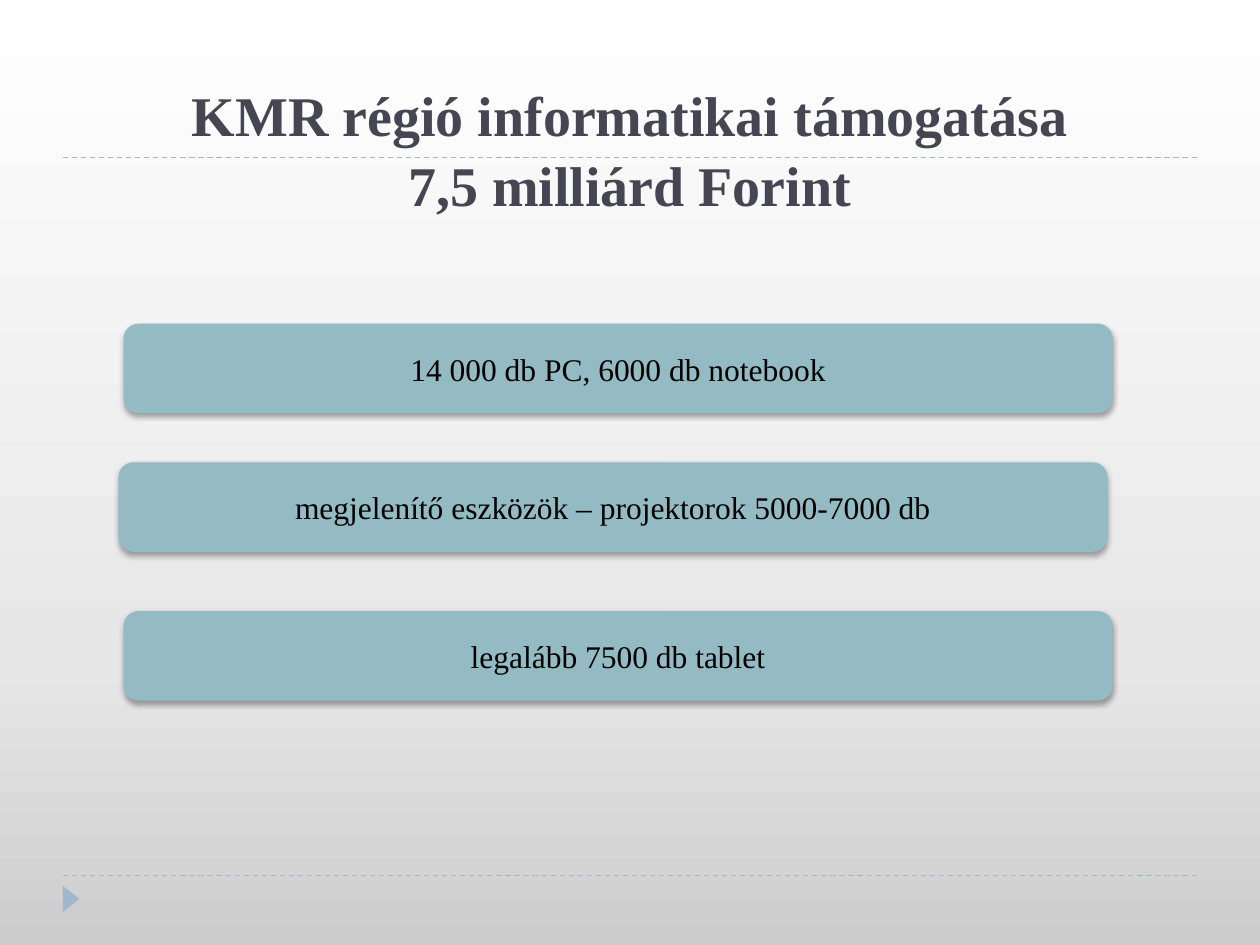
from copy import deepcopy

from lxml import etree
from pptx import Presentation
from pptx.dml.color import RGBColor
from pptx.enum.dml import MSO_LINE
from pptx.enum.shapes import MSO_CONNECTOR, MSO_SHAPE
from pptx.enum.text import MSO_ANCHOR, PP_ALIGN
from pptx.oxml import parse_xml
from pptx.oxml.ns import nsdecls, qn
from pptx.util import Pt

STRAIGHT = MSO_CONNECTOR.STRAIGHT
TRIANGLE, ROUNDED = MSO_SHAPE.ISOSCELES_TRIANGLE, MSO_SHAPE.ROUNDED_RECTANGLE
DASH, CENTER = MSO_LINE.DASH, PP_ALIGN.CENTER
MIDDLE, BOTTOM = MSO_ANCHOR.MIDDLE, MSO_ANCHOR.BOTTOM

# Content
TITLE = "KMR régió informatikai támogatása\v7,5 milliárd Forint"
BARS = [  # text, left, top
    ("14 000 db PC, 6000 db notebook", 70.6, 185),
    ("megjelenítő eszközök – projektorok 5000-7000 db", 67.7, 264.2),
    ("legalább 7500 db tablet", 70.6, 349.2),
]
BAR_W, BAR_H = 565.2, 51.1
RULES_Y = [90, 500.4]
MARGIN, SLIDE_W, SLIDE_H = 36, 720, 540

FONT = "Times New Roman"
COLORS = {"title": "464653", "text": "000000", "bar": "94BAC3", "accent": "9FB8CD"}
BACKGROUND = [(0, "CCCCCC"), (0.3, "E7E7E7"), (1, "FFFFFF")]


def rgb(name):
    return RGBColor.from_string(COLORS[name])


def write(tf, text, size, color, bold=False, anchor=MIDDLE, spacing=None):
    tf.word_wrap = True
    tf.vertical_anchor = anchor
    tf.text = text
    p = tf.paragraphs[0]
    p.alignment = CENTER
    p.line_spacing = spacing
    for r in p.runs:
        r.font.name, r.font.size, r.font.bold = FONT, Pt(size), bold
        r.font.color.rgb = rgb(color)


def add_filled(s, kind, left, top, width, height, color):
    sp = s.shapes.add_shape(kind, Pt(left), Pt(top), Pt(width), Pt(height))
    sp.shadow.inherit = False
    sp.fill.solid()
    sp.fill.fore_color.rgb = rgb(color)
    sp.line.fill.background()
    return sp


def add_soft_shadow(sp):
    effects = sp._element.spPr.find(qn("a:effectLst"))
    effects.append(parse_xml(
        f'<a:outerShdw {nsdecls("a")} blurRad="{Pt(3.1)}" dist="{Pt(1.8)}" '
        'dir="5400000" rotWithShape="0"><a:srgbClr val="000000">'
        '<a:alpha val="35000"/></a:srgbClr></a:outerShdw>'))


def paint_background(s):
    fill = s.background.fill
    fill.gradient()
    fill.gradient_angle = 90
    stop_list = s.element.find(".//" + qn("a:gsLst"))
    stop_list.append(deepcopy(stop_list[-1]))
    for stop, (position, color) in zip(fill.gradient_stops, BACKGROUND):
        stop.position = position
        stop.color.rgb = RGBColor.from_string(color)


def main():
    prs = Presentation()
    prs.slide_width, prs.slide_height = Pt(SLIDE_W), Pt(SLIDE_H)
    s = prs.slides.add_slide(prs.slide_layouts[5])
    paint_background(s)

    # Dashed rules and corner marker
    for y in RULES_Y:
        rule = s.shapes.add_connector(
            STRAIGHT, Pt(MARGIN), Pt(y), Pt(SLIDE_W - MARGIN), Pt(y))
        rule.line.color.rgb = rgb("accent")
        rule.line.width = Pt(0.75)
        rule.line.dash_style = DASH
        etree.SubElement(rule._element.spPr, qn("a:effectLst"))
    marker = add_filled(s, TRIANGLE, 33.1, 509, 15.1, 9.4, "accent")
    marker.rotation = 90

    # Title, in front of the rules
    title = s.shapes.title
    title.left, title.top = Pt(MARGIN), Pt(12.2)
    title.width, title.height = Pt(SLIDE_W - 2 * MARGIN), Pt(116)
    write(title.text_frame, TITLE, 32, "title", bold=True, anchor=BOTTOM, spacing=1.04)
    s.shapes._spTree.append(title._element)

    # Bars
    for text, left, top in BARS:
        bar = add_filled(s, ROUNDED, left, top, BAR_W, BAR_H, "bar")
        add_soft_shadow(bar)
        write(bar.text_frame, text, 18, "text")

    prs.save("out.pptx")


if __name__ == "__main__":
    main()
